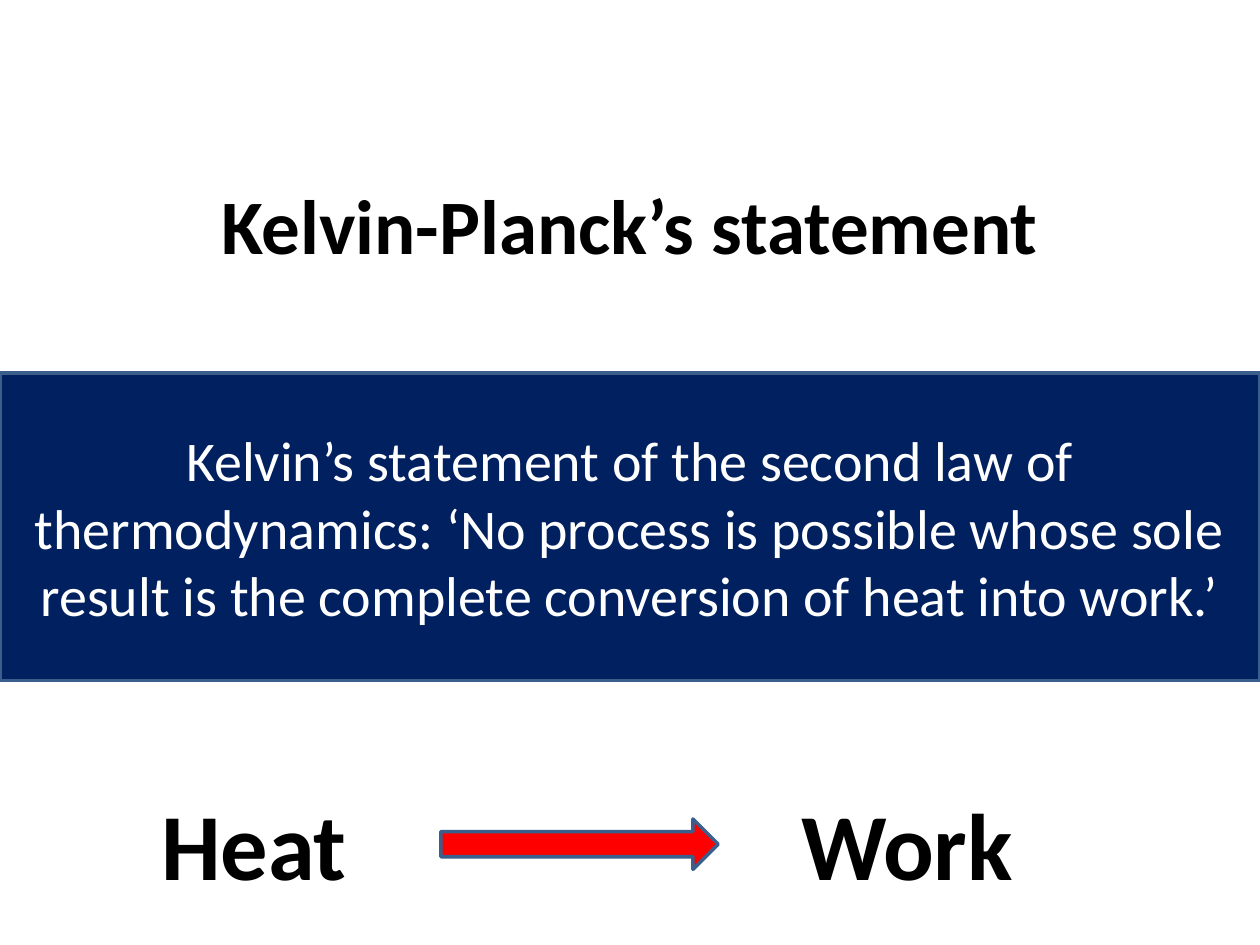
from dataclasses import dataclass

from pptx import Presentation
from pptx.dml.color import RGBColor
from pptx.enum.shapes import MSO_SHAPE
from pptx.enum.text import MSO_ANCHOR, PP_ALIGN
from pptx.shapes.autoshape import Shape
from pptx.slide import Slide
from pptx.util import Inches, Pt

FONT = "Calibri"
BLACK = RGBColor(0x00, 0x00, 0x00)
WHITE = RGBColor(0xFF, 0xFF, 0xFF)
NAVY = RGBColor(0x00, 0x20, 0x60)
RED = RGBColor(0xFF, 0x00, 0x00)
OUTLINE = RGBColor(0x3A, 0x5F, 0x8C)


@dataclass(frozen=True)
class Area:
    left: float
    top: float
    width: float
    height: float

    def lengths(self) -> list[Inches]:
        return [Inches(n) for n in (self.left, self.top, self.width, self.height)]


@dataclass(frozen=True)
class Label:
    text: str
    area: Area


LABELS = (
    Label("Heat", Area(1.18, 6.19, 1.81, 1.01)),
    Label("Work", Area(6.26, 6.19, 2.07, 1.01)),
)


def write_text(box: Shape, text: str, *, size: float, color: RGBColor = BLACK,
               bold: bool = False, align: PP_ALIGN = PP_ALIGN.CENTER,
               anchor: MSO_ANCHOR = MSO_ANCHOR.MIDDLE) -> None:
    frame = box.text_frame
    frame.word_wrap = True
    frame.vertical_anchor = anchor
    para = frame.paragraphs[0]
    para.alignment = align
    span = para.add_run()
    span.text = text
    span.font.name = FONT
    span.font.size = Pt(size)
    span.font.bold = bold
    span.font.color.rgb = color


def add_outlined_shape(page: Slide, kind: MSO_SHAPE, area: Area, fill: RGBColor) -> Shape:
    shape = page.shapes.add_shape(kind, *area.lengths())
    shape.shadow.inherit = False
    shape.fill.solid()
    shape.fill.fore_color.rgb = fill
    shape.line.color.rgb = OUTLINE
    shape.line.width = Pt(2)
    return shape


def main() -> None:
    deck = Presentation()
    deck.slide_width, deck.slide_height = Inches(10), Inches(7.5)
    page = deck.slides.add_slide(deck.slide_layouts[6])

    # Title
    title = page.shapes.add_textbox(*Area(0.5, 1.15, 9, 1.25).lengths())
    write_text(title, "Kelvin-Planck’s statement", size=44, bold=True)

    # Statement band
    band = add_outlined_shape(page, MSO_SHAPE.RECTANGLE, Area(0, 2.96, 10, 2.44), NAVY)
    write_text(
        band,
        "Kelvin’s statement of the second law of thermodynamics: ‘No process is "
        "possible whose sole result is the complete conversion of heat into work.’",
        size=32, color=WHITE,
    )

    # Heat to work
    add_outlined_shape(page, MSO_SHAPE.RIGHT_ARROW, Area(3.5, 6.5, 2.2, 0.4), RED)
    for label in LABELS:
        box = page.shapes.add_textbox(*label.area.lengths())
        write_text(box, label.text, size=54, bold=True,
                   align=PP_ALIGN.LEFT, anchor=MSO_ANCHOR.TOP)

    deck.save("out.pptx")


if __name__ == "__main__":
    main()
